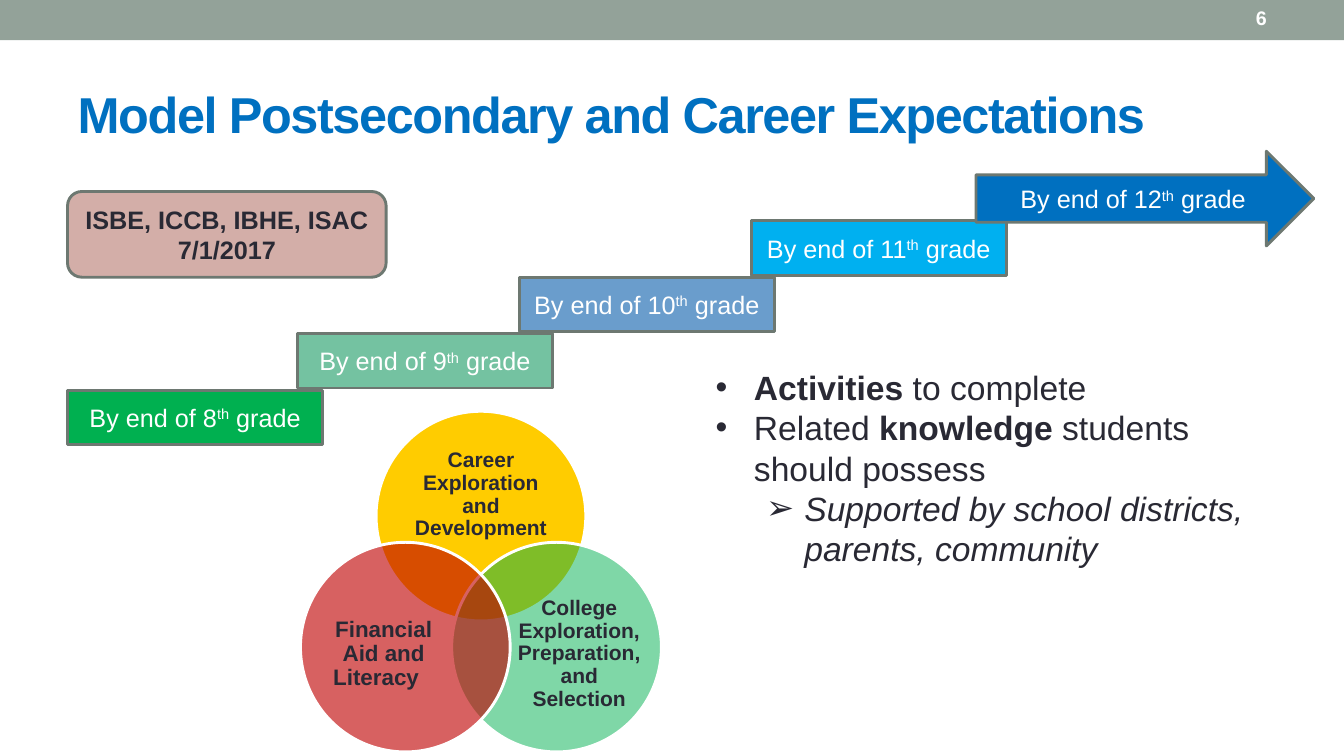
from lxml import etree
from pptx import Presentation
from pptx.dml.color import RGBColor
from pptx.enum.shapes import MSO_SHAPE
from pptx.enum.text import MSO_ANCHOR, MSO_AUTO_SIZE, PP_ALIGN
from pptx.oxml.ns import qn
from pptx.util import Inches, Pt

RECTANGLE = MSO_SHAPE.RECTANGLE
ROUNDED = MSO_SHAPE.ROUNDED_RECTANGLE
ARROW = MSO_SHAPE.RIGHT_ARROW
OVAL = MSO_SHAPE.OVAL
CENTER, LEFT = PP_ALIGN.CENTER, PP_ALIGN.LEFT
MIDDLE, TOP = MSO_ANCHOR.MIDDLE, MSO_ANCHOR.TOP
NO_AUTOFIT = MSO_AUTO_SIZE.NONE

WHITE = RGBColor(0xFF, 0xFF, 0xFF)
INK = RGBColor(0x29, 0x29, 0x34)
SAGE = RGBColor(0x93, 0xA2, 0x99)
OUTLINE = RGBColor(0x6D, 0x78, 0x71)
BLUE = RGBColor(0x00, 0x70, 0xC0)
SKY = RGBColor(0x00, 0xB0, 0xF0)
STEEL = RGBColor(0x6A, 0x9D, 0xCC)
MINT = RGBColor(0x74, 0xC2, 0xA1)
GREEN = RGBColor(0x00, 0xB0, 0x50)
YELLOW = RGBColor(0xFF, 0xCC, 0x00)
RED = RGBColor(0xC0, 0x00, 0x00)
ROSE = RGBColor(0xD3, 0xAE, 0xA8)


class SlideBuilder:
    """Holds the style and the current slide."""

    font_name = "Arial"
    line_width = Pt(2.08)

    def __init__(self, presentation):
        self.slide = presentation.slides.add_slide(presentation.slide_layouts[5])

    def run(self, paragraph, text, size, color, bold=False, italic=False, superscript=False):
        run = paragraph.add_run()
        run.text = text
        font = run.font
        font.name, font.size = self.font_name, Pt(size)
        font.bold, font.italic = bold, italic
        font.color.rgb = color
        if superscript:
            run._r.get_or_add_rPr().set("baseline", "30000")
        return run

    def title(self, text, box):
        title = self.slide.shapes.title
        title.left, title.top, title.width, title.height = map(Inches, box)
        frame = title.text_frame
        frame.auto_size, frame.vertical_anchor = NO_AUTOFIT, MIDDLE
        paragraph = frame.paragraphs[0]
        paragraph.alignment = LEFT
        run = self.run(paragraph, text, 36, BLUE, bold=True)
        run._r.get_or_add_rPr().set("spc", "-100")

    def shape(self, kind, box, fill, line=None, opacity=None):
        shape = self.slide.shapes.add_shape(kind, *map(Inches, box))
        shape.shadow.inherit = False
        shape.fill.solid()
        shape.fill.fore_color.rgb = fill
        if opacity is not None:
            color = shape.fill._xPr.find(".//" + qn("a:srgbClr"))
            etree.SubElement(color, qn("a:alpha")).set("val", str(opacity * 1000))
        if line is None:
            shape.line.fill.background()
        else:
            shape.line.color.rgb = line
            shape.line.width = self.line_width
        shape.text_frame.vertical_anchor = MIDDLE
        shape.text_frame.word_wrap = True
        return shape

    def text_box(self, box, anchor=MIDDLE, inset=True):
        frame = self.slide.shapes.add_textbox(*map(Inches, box)).text_frame
        frame.word_wrap, frame.vertical_anchor = True, anchor
        if not inset:
            frame.margin_left = frame.margin_right = 0
            frame.margin_top = frame.margin_bottom = 0
        return frame

    def centered(self, frame, lines, size, color, bold=False):
        for index, line in enumerate(lines):
            paragraph = frame.add_paragraph() if index else frame.paragraphs[0]
            paragraph.alignment = CENTER
            self.run(paragraph, line, size, color, bold)

    def grade(self, kind, box, fill, number):
        paragraph = self.shape(kind, box, fill, OUTLINE).text_frame.paragraphs[0]
        paragraph.alignment = CENTER
        self.run(paragraph, f"By end of {number}", 18, WHITE)
        self.run(paragraph, "th", 18, WHITE, superscript=True)
        self.run(paragraph, " grade", 18, WHITE)

    def circle(self, left, top, fill, opacity, label, label_box, size):
        self.shape(OVAL, (left, top, 2.08, 2.08), fill, WHITE, opacity)
        frame = self.text_box(label_box, inset=False)
        self.centered(frame, [label], size, INK, bold=True)
        frame.paragraphs[0].line_spacing = 0.9

    def bullets(self, box, items):
        frame = self.text_box(box, TOP)
        for index, (level, mark, runs) in enumerate(items):
            paragraph = frame.add_paragraph() if index else frame.paragraphs[0]
            paragraph.level = level
            properties = paragraph._p.get_or_add_pPr()
            properties.set("marL", str(Inches(0.38 + 0.5 * level)))
            properties.set("indent", str(Inches(-0.38)))
            etree.SubElement(properties, qn("a:buFont")).set("typeface", self.font_name)
            etree.SubElement(properties, qn("a:buChar")).set("char", mark)
            for text, bold, italic in runs:
                self.run(paragraph, text, 24, INK, bold, italic)


def main():
    presentation = Presentation()
    presentation.slide_width, presentation.slide_height = Inches(13.33), Inches(7.5)
    builder = SlideBuilder(presentation)

    builder.shape(RECTANGLE, (0, 0, 13.33, 0.4), SAGE)
    builder.title("Model Postsecondary and Career Expectations", (0.67, 0.58, 12, 1.08))

    circles = [
        (3.73, 4.08, YELLOW, None, "Career Exploration and Development",
         (4.01, 4.44, 1.52, 0.94), 15),
        (4.48, 5.38, GREEN, 50, "College Exploration, Preparation, and Selection",
         (5.12, 5.92, 1.25, 1.14), 15),
        (2.98, 5.38, RED, 62, "Financial Aid and Literacy\t",
         (3.18, 5.92, 1.25, 1.14), 16),
    ]
    for circle in circles:
        builder.circle(*circle)

    builder.centered(builder.text_box((11.73, 0, 1.56, 0.36)), ["6"], 14, WHITE, bold=True)

    steps = [(0.67, GREEN), (2.95, MINT), (5.15, STEEL), (7.45, SKY)]
    for index, (left, fill) in enumerate(steps):
        top = 3.87 - 0.56 * index
        builder.grade(RECTANGLE, (left, top, 2.53, 0.54), fill, 8 + index)

    builder.bullets((7, 3.59, 5.96, 2.12), [
        (0, "•", [("Activities", True, False), (" to complete", False, False)]),
        (0, "•", [("Related ", False, False), ("knowledge", True, False),
                  (" students should possess", False, False)]),
        (1, "➢", [("Supported by school districts, parents, community", False, True)]),
    ])

    agencies = builder.shape(ROUNDED, (0.67, 1.9, 3.16, 0.85), ROSE, OUTLINE)
    builder.centered(agencies.text_frame, ["ISBE, ICCB, IBHE, ISAC", "7/1/2017"], 18, INK, bold=True)
    builder.grade(ARROW, (9.68, 1.5, 3.35, 0.94), BLUE, 12)

    presentation.save("out.pptx")


if __name__ == "__main__":
    main()
